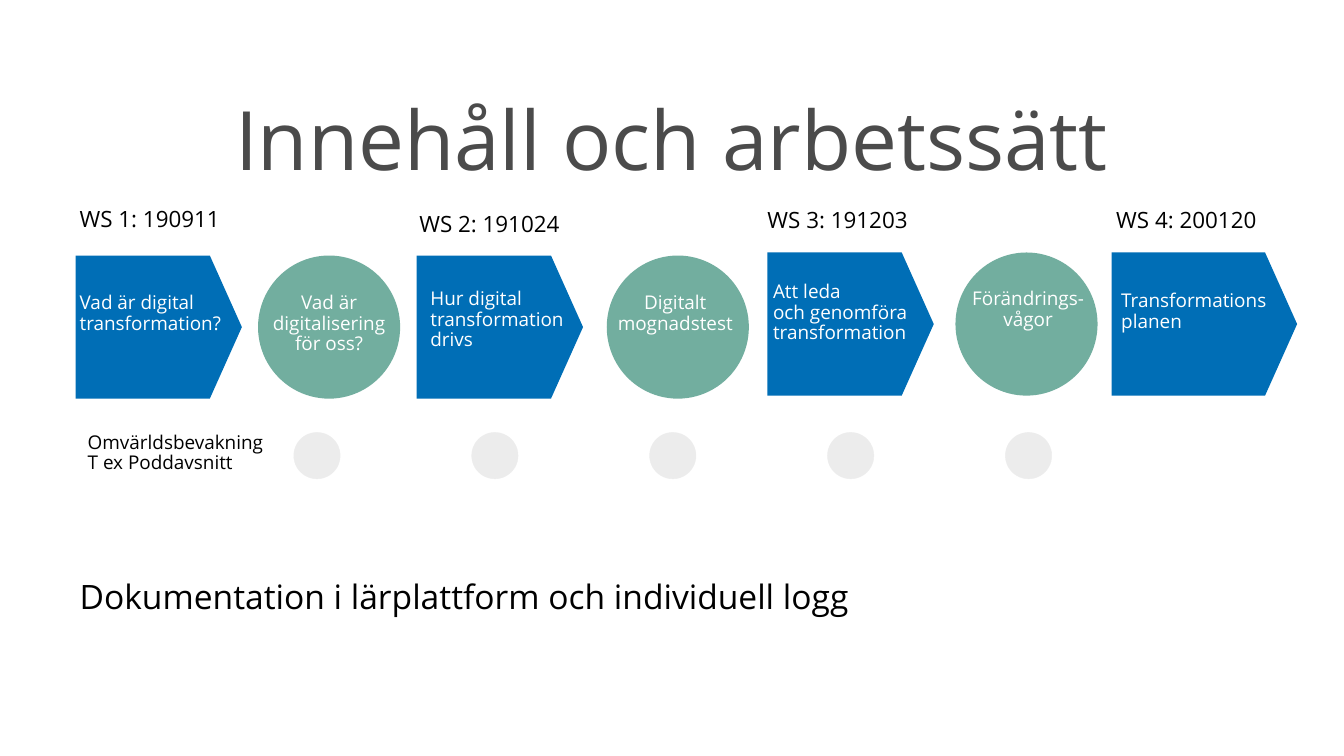
from pptx import Presentation
from pptx.dml.color import RGBColor
from pptx.enum.dml import MSO_LINE
from pptx.enum.shapes import MSO_SHAPE
from pptx.enum.text import MSO_ANCHOR, PP_ALIGN
from pptx.util import Inches, Pt

FONT = "Open Sans"
BLUE, GREEN, GREY = "006EB6", "72AE9F", "ECECEC"
WHITE, BLACK, TITLE = "FFFFFF", "000000", "4B4B4B"
HEIGHT = 2.84

# arrow box (left, top, width), label, label box
STEPS = [
    ((1.5, 5.07, 3.3), "Vad är digital \vtransformation?", (1.31, 5.55, 3.68, 1.88)),
    ((8.27, 5.07, 3.3), "Hur digital \vtransformation \vdrivs", (8.27, 5.47, 3.3, 1.5)),
    ((15.23, 5.01, 3.3), "Att leda \voch genomföra \vtransformation", (15.07, 5.33, 3.68, 2.11)),
    ((22.06, 5.01, 3.68), "Transformationsplanen", (21.98, 5.51, 3.54, 1.3)),
]
WORKSHOPS = [
    ("WS 1: 190911", (1.31, 3.89, 4.01, 1.16)),
    ("WS 2: 191024", (8.05, 3.98, 4.65, 1.3)),
    ("WS 3: 191203", (14.96, 3.91, 4.16, 1.3)),
    ("WS 4: 200120", (21.88, 3.91, 4.32, 1.3)),
]
# circle top, label, label box
ACTIVITIES = [
    (5.07, "Vad är digitalisering för oss?", (4.88, 5.55, 3.3, 1.88)),
    (5.07, "Digitalt\nmognadstest", (11.75, 5.55, 3.3, 1.88)),
    (5.01, "Förändrings-vågor", (18.99, 5.47, 2.82, 1.5)),
]


def rgb(value):
    return RGBColor.from_string(value)


def add_text(s, text, box, size, color, align=PP_ALIGN.LEFT, anchor=MSO_ANCHOR.TOP, inset=0.27):
    """Add a wrapped text box; inset is the top and bottom margin."""
    tf = s.shapes.add_textbox(*map(Inches, box)).text_frame
    frame = {
        "word_wrap": True,
        "vertical_anchor": anchor,
        "margin_left": Inches(0.27),
        "margin_right": Inches(0.27),
        "margin_top": Inches(inset),
        "margin_bottom": Inches(inset),
        "text": text,
    }
    for name, value in frame.items():
        setattr(tf, name, value)
    for p in tf.paragraphs:
        p.alignment = align
        p.line_spacing = 0.9
        for r in p.runs:
            r.font.name = FONT
            r.font.size = Pt(size)
            r.font.color.rgb = rgb(color)


def add_filled(s, kind, box, color):
    sp = s.shapes.add_shape(kind, *map(Inches, box))
    sp.shadow.inherit = False
    sp.fill.solid()
    sp.fill.fore_color.rgb = rgb(color)
    sp.line.fill.background()
    return sp


def add_arrow(s, left, top, width):
    sp = add_filled(s, MSO_SHAPE.PENTAGON, (left, top, width, HEIGHT), BLUE)
    sp.adjustments[0] = 0.224


def add_dot(s, left):
    sp = add_filled(s, MSO_SHAPE.OVAL, (left, 8.58, 0.92, 0.92), GREY)
    sp.line.color.rgb = rgb(GREY)
    sp.line.width = Pt(0.75)
    sp.line.dash_style = MSO_LINE.ROUND_DOT


def main():
    prs = Presentation()
    prs.slide_width, prs.slide_height = Inches(26.67), Inches(15)
    s = prs.slides.add_slide(prs.slide_layouts[6])

    add_text(s, "Innehåll och arbetssätt", (1.33, 1.6, 24, 2.5), 117, TITLE,
             PP_ALIGN.CENTER, MSO_ANCHOR.MIDDLE, 0.13)
    for arrow, label, box in STEPS:
        add_arrow(s, *arrow)
        add_text(s, label, box, 27, WHITE)
    for label, box in WORKSHOPS:
        add_text(s, label, box, 32, BLACK)
    for i, (top, label, box) in enumerate(ACTIVITIES):
        add_filled(s, MSO_SHAPE.OVAL, (5.12 + 6.92 * i, top, 2.82, HEIGHT), GREEN)
        add_text(s, label, box, 27, WHITE, PP_ALIGN.CENTER)
    for i in range(5):
        add_dot(s, 5.83 + 3.53 * i)
    add_text(s, "Omvärldsbevakning\nT ex Poddavsnitt", (1.47, 8.32, 4.32, 1.88), 27, BLACK)
    add_text(s, "Dokumentation i lärplattform och individuell logg",
             (1.31, 11.39, 17.22, 2.15), 48, BLACK, inset=0.13)
    prs.save("out.pptx")


if __name__ == "__main__":
    main()
